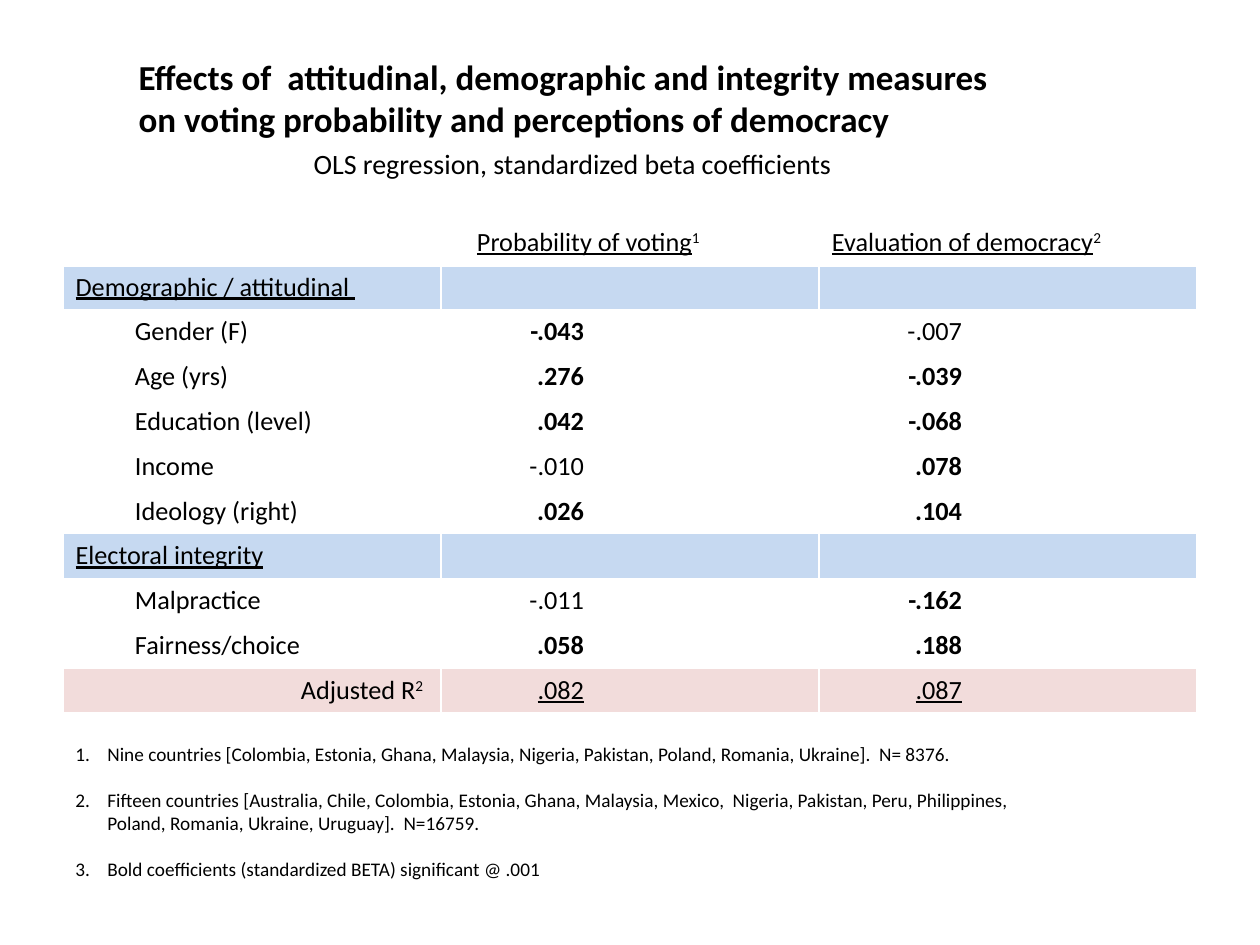
from lxml.etree import SubElement
from pptx import Presentation
from pptx.dml.color import RGBColor
from pptx.enum.text import MSO_ANCHOR, MSO_AUTO_SIZE, PP_ALIGN
from pptx.oxml import parse_xml
from pptx.oxml.ns import nsdecls, qn
from pptx.util import Emu, Pt

HUES = {"ink": "000000", "line": "FFFFFF", "group": "C6D9F1", "fit": "F2DCDB"}


def px(num):
    """Turn px, at 126 to the inch, into EMU."""
    return Emu(round(num * 914400 / 126))


def write(par, text, size=15, bold=False, under=False, sup=False):
    """Add a run per line; an empty text only sets the height of the line."""
    if not text:
        SubElement(par._p, qn("a:endParaRPr"), sz=str(size * 100))
        return
    for i, line in enumerate(text.split("\n")):
        if i:
            gap = SubElement(par._p, qn("a:br"))
            SubElement(gap, qn("a:rPr"), sz=str(size * 100))
        run = par.add_run()
        run.text = line
        font = run.font
        font.name, font.size = "Calibri", Pt(size)
        font.bold, font.underline = bold, under
        font.color.rgb = RGBColor.from_string(HUES["ink"])
        if sup:
            run._r.get_or_add_rPr().set("baseline", "30000")


deck = Presentation()
deck.slide_width, deck.slide_height = px(1260), px(945)
slide = deck.slides.add_slide(deck.slide_layouts[5])

# Title and subtitle
title = slide.shapes.title
title.left, title.top, title.width, title.height = px(126), px(37), px(1071), px(161)
frame = title.text_frame
frame.auto_size = MSO_AUTO_SIZE.NONE
frame.vertical_anchor = MSO_ANCHOR.MIDDLE
par = frame.paragraphs[0]
par.alignment = PP_ALIGN.LEFT
write(par, "Effects of  attitudinal, demographic and integrity measures\n"
      "on voting probability and perceptions of democracy", size=20, bold=True)
par = frame.add_paragraph()
par.alignment = PP_ALIGN.LEFT
par.space_before = Pt(4)
par._p.get_or_add_pPr().set("marL", str(px(175)))
write(par, "OLS regression, standardized beta coefficients", size=16)

# Regression table: kind of row, label, then (value, bold) for each model
rows = [
    ("head", "", ("Probability of voting", "1"), ("Evaluation of democracy", "2")),
    ("group", "Demographic / attitudinal ", ("", False), ("", False)),
    ("item", "Gender (F)", ("-.043", True), ("-.007", False)),
    ("item", "Age (yrs)", (".276", True), ("-.039", True)),
    ("item", "Education (level)", (".042", True), ("-.068", True)),
    ("item", "Income", ("-.010", False), (".078", True)),
    ("item", "Ideology (right)", (".026", True), (".104", True)),
    ("group", "Electoral integrity", ("", False), ("", False)),
    ("item", "Malpractice", ("-.011", False), ("-.162", True)),
    ("item", "Fairness/choice", (".058", True), (".188", True)),
    ("fit", "Adjusted R", (".082", False), (".087", False)),
]
grid = slide.shapes.add_table(len(rows), 3, px(63), px(220), px(1134), px(484)).table
grid.first_row = grid.horz_banding = False
for col in grid.columns:
    col.width = px(378)

for y, (kind, label, *models) in enumerate(rows):
    grid.rows[y].height = px(44)
    for x in range(3):
        cell = grid.cell(y, x)
        par = cell.text_frame.paragraphs[0]
        if x == 0:
            write(par, label, under=kind == "group")
            if kind == "item":
                cell.margin_left = px(72)
            elif kind == "fit":
                write(par, "2", sup=True)
                par.alignment = PP_ALIGN.RIGHT
                cell.margin_right = px(18)
        elif kind == "head":
            name, note = models[x - 1]
            write(par, name, under=True)
            write(par, note, sup=True)
            cell.margin_left = px(36 if x == 1 else 13)
        else:
            value, bold = models[x - 1]
            write(par, value, bold=bold, under=kind == "fit")
            par.alignment = PP_ALIGN.RIGHT
            cell.margin_right = px(235)

        if kind in HUES:
            cell.fill.solid()
            cell.fill.fore_color.rgb = RGBColor.from_string(HUES[kind])
        else:
            cell.fill.background()
        for i, side in enumerate("LRTB"):
            thick = (side == "B" and y == 0) or (side == "T" and y == 1)
            edge = parse_xml(
                f'<a:ln{side} {nsdecls("a")} w="{Pt(3 if thick else 1)}"><a:solidFill>'
                f'<a:srgbClr val="{HUES["line"]}"/></a:solidFill></a:ln{side}>')
            cell._tc.get_or_add_tcPr().insert(i, edge)

# Numbered notes
notes = [
    "Nine countries [Colombia, Estonia, Ghana, Malaysia, Nigeria, Pakistan, "
    "Poland, Romania, Ukraine].  N= 8376.",
    "Fifteen countries [Australia, Chile, Colombia, Estonia, Ghana, Malaysia, "
    "Mexico,  Nigeria, Pakistan, Peru, Philippines,\n"
    "Poland, Romania, Ukraine, Uruguay].  N=16759.",
    "Bold coefficients (standardized BETA) significant @ .001",
]
frame = slide.shapes.add_textbox(px(63), px(736), px(1061), px(176)).text_frame
frame.word_wrap = True
for i, note in enumerate(notes):
    par = frame.add_paragraph() if i else frame.paragraphs[0]
    par.space_before = Pt(13 if i else 0)
    props = par._p.get_or_add_pPr()
    props.set("marL", str(px(32)))
    props.set("indent", str(-px(32)))
    SubElement(props, qn("a:buFont"), typeface="+mj-lt")
    SubElement(props, qn("a:buAutoNum"), type="arabicPeriod")
    write(par, note, size=11)

deck.save("out.pptx")
